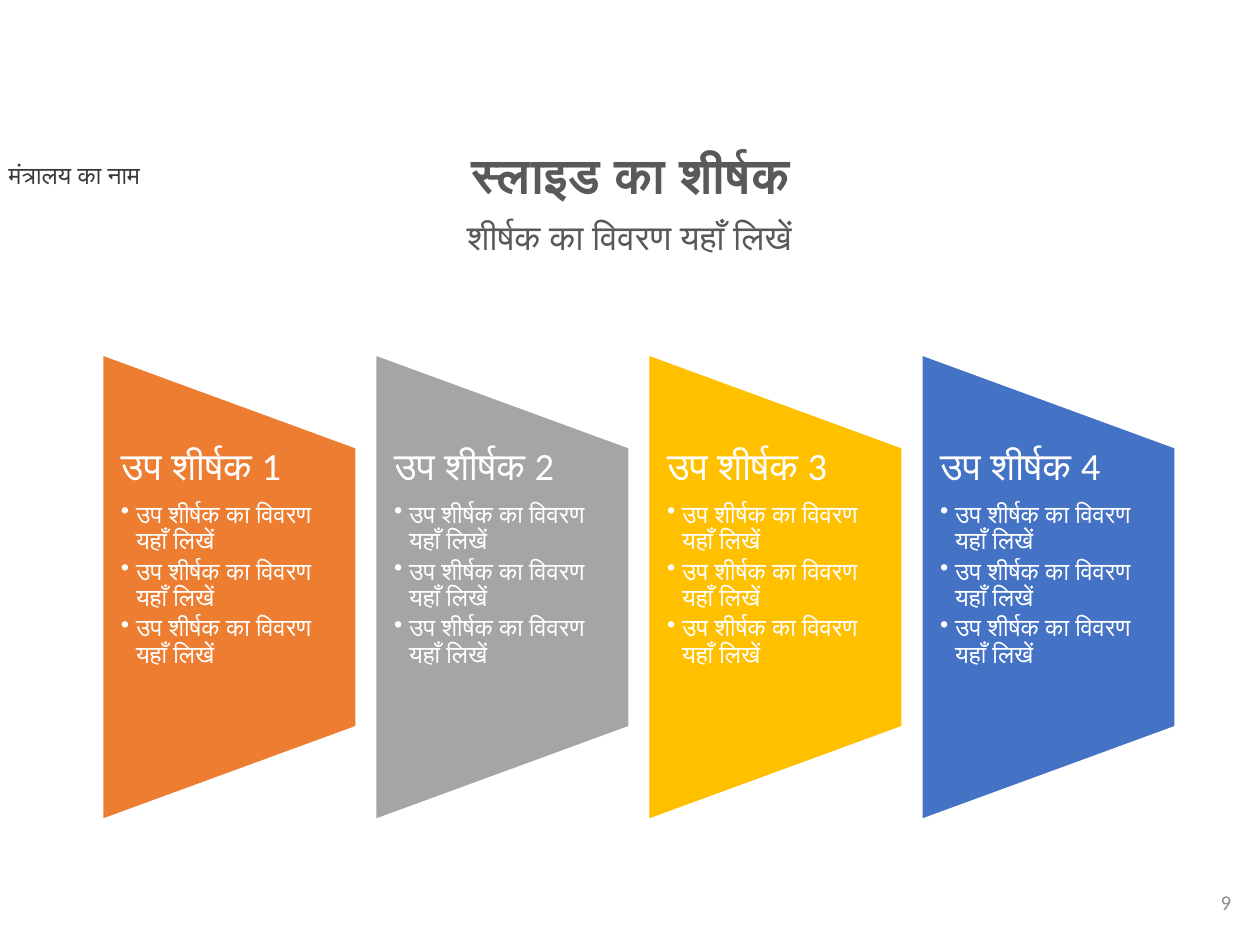
from lxml.etree import SubElement
from pptx import Presentation
from pptx.dml.color import RGBColor
from pptx.enum.shapes import MSO_SHAPE as Shape
from pptx.enum.text import MSO_ANCHOR as Anchor, MSO_AUTO_SIZE as AutoSize, PP_ALIGN as Align
from pptx.oxml.ns import qn
from pptx.util import Inches, Pt

WHITE = RGBColor(0xFF, 0xFF, 0xFF)
DARK = RGBColor(0x3B, 0x38, 0x38)
HEADING = RGBColor(0x59, 0x59, 0x59)
PAGE_GRAY = RGBColor(0x8C, 0x8C, 0x8C)
PANEL_COLORS = [
    RGBColor(0xED, 0x7D, 0x31),
    RGBColor(0xA5, 0xA5, 0xA5),
    RGBColor(0xFF, 0xC0, 0x00),
    RGBColor(0x44, 0x72, 0xC4),
]
PANEL_LEFT, PANEL_STEP = 0.81, 2.167
PANEL_WIDTH, PANEL_HEIGHT = 2.02, 3.7
PANEL_MIDDLE = 4.66
TEXT_HEIGHT = 2.22
BULLET_INDENT = 0.12
DETAIL = "उप शीर्षक का विवरण यहाँ लिखें"


class SlideBuilder:
    font_name = "Calibri"

    def __init__(self, slide):
        self.slide = slide

    def style(self, paragraph, size, color, bold=False, align=Align.LEFT):
        paragraph.alignment = align
        font = paragraph.font
        font.name, font.size, font.bold = self.font_name, Pt(size), bold
        font.color.rgb = color

    def placeholder(self, shape, box, text, size, bold=False):
        shape.left, shape.top, shape.width, shape.height = map(Inches, box)
        frame = shape.text_frame
        frame.text = text
        frame.auto_size = AutoSize.NONE
        frame.vertical_anchor = Anchor.TOP
        paragraph = frame.paragraphs[0]
        self.set_bullet(paragraph)
        self.style(paragraph, size, HEADING, bold, Align.CENTER)
        paragraph.line_spacing = 0.9
        paragraph.space_before = Pt(0)

    def text_box(self, box):
        frame = self.slide.shapes.add_textbox(*map(Inches, box)).text_frame
        frame.word_wrap = True
        return frame

    def label(self, box, text, size, color, align=Align.LEFT, anchor=Anchor.TOP):
        frame = self.text_box(box)
        frame.text = text
        frame.vertical_anchor = anchor
        self.style(frame.paragraphs[0], size, color, align=align)

    def set_bullet(self, paragraph, character=None, indent=0):
        """Give the paragraph a hanging bullet, or none without a character."""
        properties = paragraph._p.get_or_add_pPr()
        properties.set("marL", str(Inches(indent)))
        properties.set("indent", str(-Inches(indent)))
        if character:
            SubElement(properties, qn("a:buChar")).set("char", character)
        else:
            SubElement(properties, qn("a:buNone"))

    def panel(self, left, color, heading, details):
        # The shape is turned a quarter, so its width runs down the slide.
        center = left + PANEL_WIDTH / 2
        shape = self.slide.shapes.add_shape(
            Shape.FLOWCHART_MANUAL_OPERATION,
            Inches(center - PANEL_HEIGHT / 2), Inches(PANEL_MIDDLE - PANEL_WIDTH / 2),
            Inches(PANEL_HEIGHT), Inches(PANEL_WIDTH))
        shape.rotation = 270
        shape.shadow.inherit = False
        shape.fill.solid()
        shape.fill.fore_color.rgb = color
        shape.line.color.rgb = WHITE
        shape.line.width = Pt(1.5)

        frame = self.text_box((left, PANEL_MIDDLE - TEXT_HEIGHT / 2, PANEL_WIDTH, TEXT_HEIGHT))
        frame.margin_left = frame.margin_right = Inches(0.15)
        frame.margin_top = frame.margin_bottom = 0
        frame.text = "\n".join([heading, *details])
        for index, paragraph in enumerate(frame.paragraphs):
            size, gap = (14, 0.15) if index else (22, 0.35)
            if index:
                paragraph.level = 1
                self.set_bullet(paragraph, "•", BULLET_INDENT)
            self.style(paragraph, size, WHITE)
            paragraph.line_spacing = 0.9
            paragraph.space_after = Pt(size * gap)


def main():
    presentation = Presentation()
    presentation.slide_width, presentation.slide_height = Inches(10), Inches(7.5)
    slide = presentation.slides.add_slide(presentation.slide_layouts[1])
    builder = SlideBuilder(slide)

    builder.label((-0.03, 1.22, 2.18, 0.34), "मंत्रालय का नाम", 14, DARK)
    builder.label((7.62, 6.96, 2.25, 0.4), "9", 12, PAGE_GRAY, Align.RIGHT, Anchor.MIDDLE)
    builder.placeholder(slide.shapes.title, (1.86, 1.15, 6.29, 0.47),
                        "स्लाइड का शीर्षक", 28, bold=True)
    builder.placeholder(slide.placeholders[1], (1.46, 1.7, 7.07, 0.63),
                        "शीर्षक का विवरण यहाँ लिखें", 20)
    for index, color in enumerate(PANEL_COLORS):
        builder.panel(PANEL_LEFT + index * PANEL_STEP, color,
                      f"उप शीर्षक {index + 1}", [DETAIL] * 3)

    presentation.save("out.pptx")


if __name__ == "__main__":
    main()
